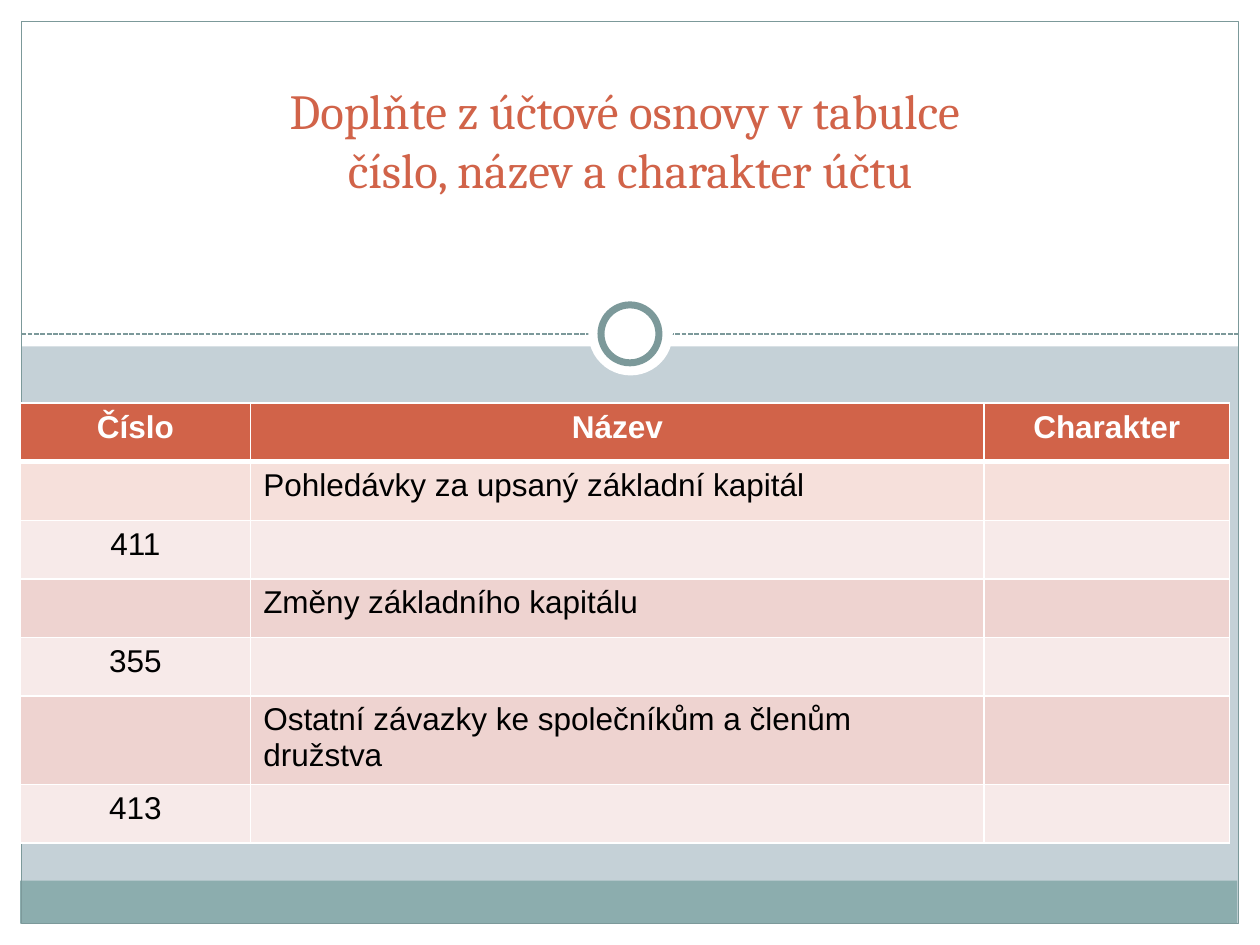
from dataclasses import dataclass
from typing import Optional

from lxml.etree import SubElement
from pptx import Presentation
from pptx.dml.color import RGBColor
from pptx.enum.dml import MSO_LINE_DASH_STYLE as Dash
from pptx.enum.shapes import MSO_CONNECTOR, MSO_SHAPE as Preset
from pptx.enum.text import MSO_ANCHOR, PP_ALIGN as Align
from pptx.oxml.ns import qn
from pptx.util import Inches, Pt


@dataclass(frozen=True)
class Theme:
    background: str = "C5D1D7"
    white: str = "FFFFFF"
    black: str = "000000"
    accent: str = "D16349"
    footer: str = "8CADAE"
    outline: str = "7C999A"
    first_row: str = "F6E0DB"
    odd_row: str = "EED3D0"
    even_row: str = "F7EAE9"
    title_font: str = "Cambria"
    table_font: str = "Arial"
    title_size: int = 28
    table_size: int = 18


@dataclass(frozen=True)
class Decoration:
    left: float
    top: float
    width: float
    height: float
    fill: Optional[str] = None
    line_width: float = 0
    preset: Preset = Preset.RECTANGLE


THEME = Theme()
WIDTH, HEIGHT, MARGIN = 10, 7.5, 0.17
INNER_WIDTH = WIDTH - 2 * MARGIN
DIVIDER_Y = 2.65

PANELS = [
    Decoration(0, HEIGHT - MARGIN, WIDTH, MARGIN, THEME.white),
    Decoration(WIDTH - MARGIN, 0, MARGIN, HEIGHT, THEME.white),
    Decoration(0, 0, MARGIN, HEIGHT, THEME.white),
    Decoration(0, 0, WIDTH, 2.75, THEME.white),
    Decoration(0.16, 6.99, INNER_WIDTH, 0.34, THEME.footer),
]
FRAME_AND_RING = [
    Decoration(MARGIN, MARGIN, INNER_WIDTH, HEIGHT - 2 * MARGIN, line_width=0.75),
    Decoration(4.67, 2.31, 0.67, 0.67, THEME.white, preset=Preset.OVAL),
    Decoration(4.77, 2.42, 0.46, 0.46, THEME.white, 4, Preset.OVAL),
]

TITLE_LINES = ["Doplňte z účtové osnovy v tabulce ", "číslo, název a charakter účtu"]
COLUMN_WIDTHS = [1.83, 5.82, 1.95]
ROW_HEIGHT = 0.465
ACCOUNTS = [
    ("Číslo", "Název", "Charakter"),
    ("", "Pohledávky za upsaný základní kapitál", ""),
    ("411", "", ""),
    ("", "Změny základního kapitálu", ""),
    ("355", "", ""),
    ("", "Ostatní závazky ke společníkům a členům družstva", ""),
    ("413", "", ""),
]


def rgb(color: str) -> RGBColor:
    return RGBColor.from_string(color)


def add_decoration(slide, item: Decoration) -> None:
    shape = slide.shapes.add_shape(item.preset, Inches(item.left), Inches(item.top),
                                   Inches(item.width), Inches(item.height))
    shape.shadow.inherit = False
    if item.fill:
        shape.fill.solid()
        shape.fill.fore_color.rgb = rgb(item.fill)
    else:
        shape.fill.background()
    if item.line_width:
        shape.line.color.rgb = rgb(THEME.outline)
        shape.line.width = Pt(item.line_width)
    else:
        shape.line.fill.background()


def add_divider(slide) -> None:
    divider = slide.shapes.add_connector(
        MSO_CONNECTOR.STRAIGHT, Inches(MARGIN), Inches(DIVIDER_Y),
        Inches(WIDTH - MARGIN), Inches(DIVIDER_Y))
    divider.line.color.rgb = rgb(THEME.outline)
    divider.line.width = Pt(0.9)
    divider.line.dash_style = Dash.SQUARE_DOT
    # SQUARE_DOT is the sysDot/sysDash family; the preset is set explicitly
    divider.line._ln.find(qn("a:prstDash")).set("val", "sysDash")
    SubElement(divider._element.spPr, qn("a:effectLst"))


def add_run(paragraph, text: str, font: str, size: int, color: str, bold: bool = False) -> None:
    run = paragraph.add_run()
    run.text = text
    run.font.name = font
    run.font.size = Pt(size)
    run.font.color.rgb = rgb(color)
    run.font.bold = bold


def add_title(slide) -> None:
    frame = slide.shapes.add_textbox(Inches(0.75), Inches(0.6), Inches(8.5),
                                     Inches(1.02)).text_frame
    frame.word_wrap = True
    frame.vertical_anchor = MSO_ANCHOR.BOTTOM
    paragraph = frame.paragraphs[0]
    paragraph.alignment = Align.CENTER
    for index, line in enumerate(TITLE_LINES):
        if index:
            paragraph.add_line_break()
        add_run(paragraph, line, THEME.title_font, THEME.title_size, THEME.accent)


def set_borders(cell, is_header: bool, below_header: bool) -> None:
    """Give the cell white edges, with a thick one between header and body."""
    widths = {"L": 1, "R": 1, "T": 3 if below_header else 1, "B": 3 if is_header else 1}
    properties = cell._tc.get_or_add_tcPr()
    for side, width in widths.items():
        edge = SubElement(properties, qn(f"a:ln{side}"), w=str(Pt(width)))
        SubElement(SubElement(edge, qn("a:solidFill")), qn("a:srgbClr"), val=THEME.white)


def row_fill(row: int) -> str:
    special = {0: THEME.accent, 1: THEME.first_row}
    return special.get(row, THEME.odd_row if row % 2 else THEME.even_row)


def add_accounts_table(slide) -> None:
    table = slide.shapes.add_table(
        len(ACCOUNTS), len(COLUMN_WIDTHS), Inches(0.16), Inches(3.2),
        Inches(sum(COLUMN_WIDTHS)), Inches(ROW_HEIGHT * len(ACCOUNTS))).table
    for column, width in zip(table.columns, COLUMN_WIDTHS):
        column.width = Inches(width)
    for row, texts in enumerate(ACCOUNTS):
        is_header = row == 0
        for column, text in enumerate(texts):
            cell = table.cell(row, column)
            set_borders(cell, is_header, row == 1)
            cell.fill.solid()
            cell.fill.fore_color.rgb = rgb(row_fill(row))
            paragraph = cell.text_frame.paragraphs[0]
            paragraph.alignment = Align.CENTER if is_header or column == 0 else Align.LEFT
            if text:
                add_run(paragraph, text, THEME.table_font, THEME.table_size,
                        THEME.white if is_header else THEME.black, is_header)


def main() -> None:
    deck = Presentation()
    deck.slide_width, deck.slide_height = Inches(WIDTH), Inches(HEIGHT)
    slide = deck.slides.add_slide(deck.slide_layouts[6])
    slide.background.fill.solid()
    slide.background.fill.fore_color.rgb = rgb(THEME.background)
    for panel in PANELS:
        add_decoration(slide, panel)
    add_divider(slide)
    for item in FRAME_AND_RING:
        add_decoration(slide, item)
    add_title(slide)
    add_accounts_table(slide)
    deck.save("out.pptx")


if __name__ == "__main__":
    main()
